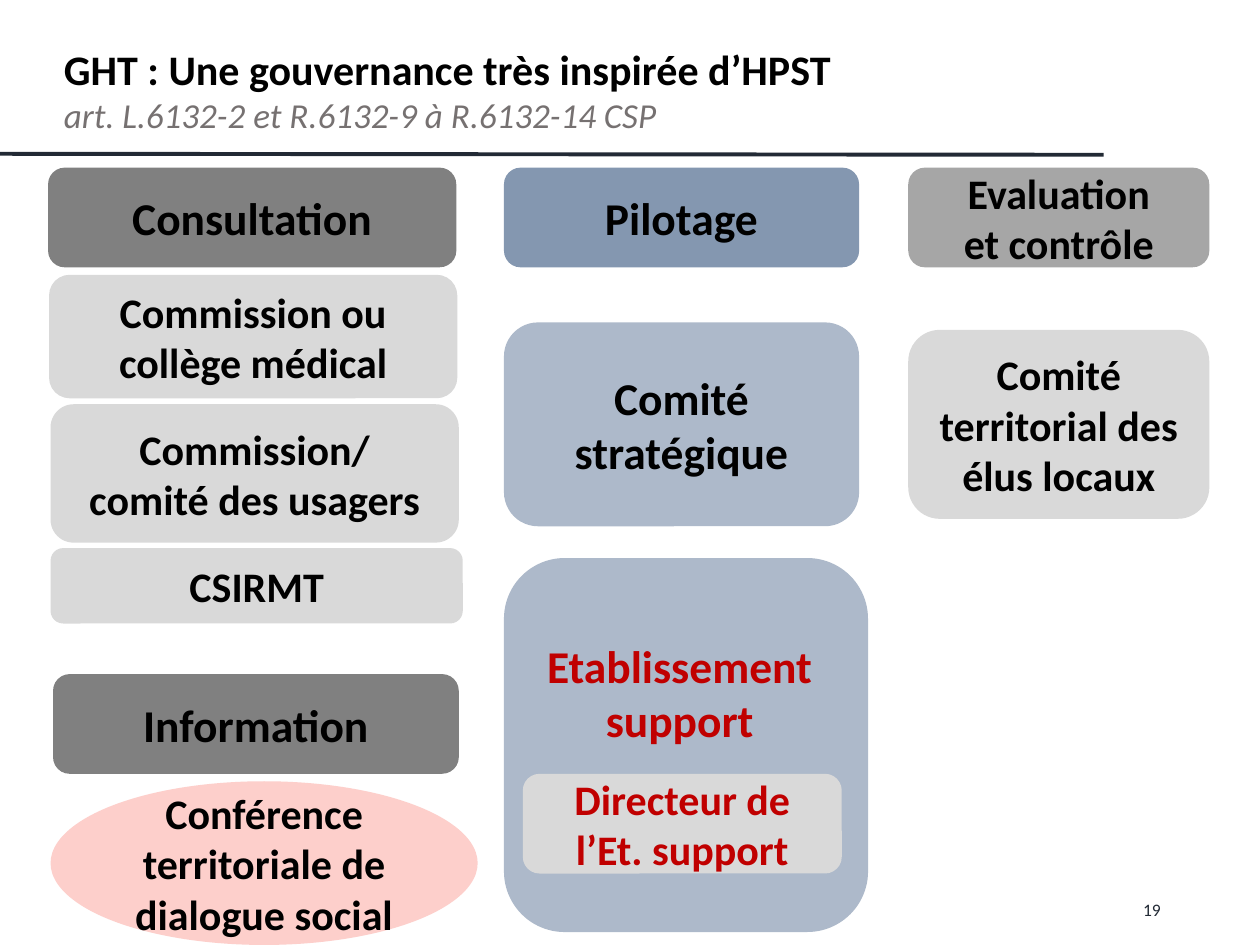
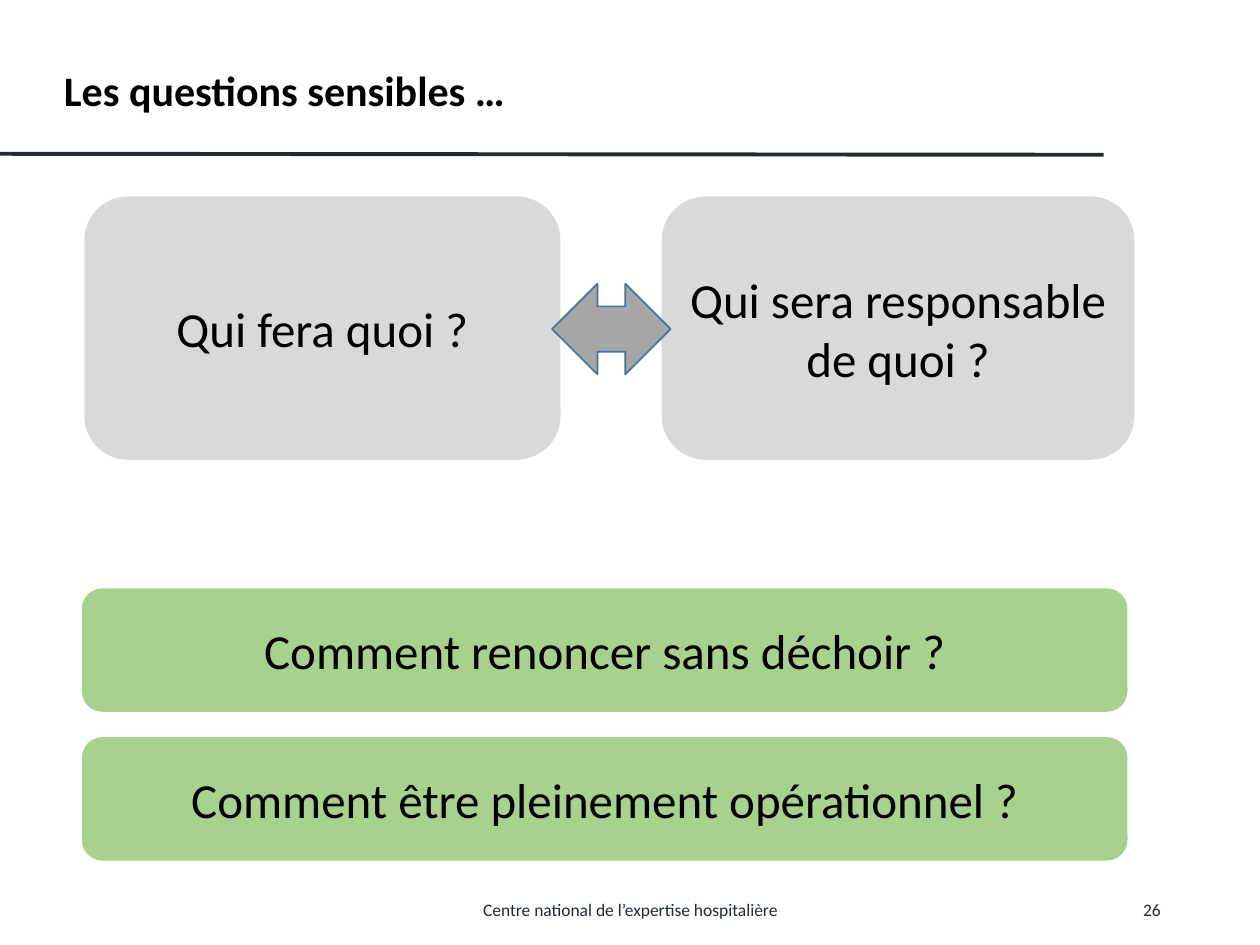
from pptx import Presentation
from pptx import util as u
from pptx.dml.color import RGBColor
from pptx.enum import shapes, text
from pptx.oxml import ns
from lxml import etree

BLACK = RGBColor(0x00, 0x00, 0x00)
RED = RGBColor(0xC0, 0x00, 0x00)
INK = RGBColor(0x22, 0x2A, 0x35)
MUTED = RGBColor(0x76, 0x71, 0x71)
DARK = RGBColor(0x80, 0x80, 0x80)
GREY = RGBColor(0xA6, 0xA6, 0xA6)
LIGHT = RGBColor(0xD9, 0xD9, 0xD9)
BLUE = RGBColor(0x84, 0x97, 0xB0)
PALE = RGBColor(0xAD, 0xB9, 0xCA)
PINK = RGBColor(0xFD, 0xCF, 0xCB)
GREEN = RGBColor(0xA9, 0xD1, 0x8E)
EDGE = RGBColor(0x43, 0x73, 0x9E)

ROUND = shapes.MSO_SHAPE.ROUNDED_RECTANGLE
OVAL = shapes.MSO_SHAPE.OVAL
ARROW = shapes.MSO_SHAPE.LEFT_RIGHT_ARROW
LEFT, MID, RIGHT = text.PP_ALIGN.LEFT, text.PP_ALIGN.CENTER, text.PP_ALIGN.RIGHT


def write(item, words, size, color=BLACK, bold=False, align=MID):
    frame = item.text_frame
    frame.word_wrap = True
    frame.vertical_anchor = text.MSO_ANCHOR.MIDDLE
    frame.text = words
    for para in frame.paragraphs:
        para.alignment = align
        for run in para.runs:
            run.font.name = "Calibri"
            run.font.size = u.Pt(size)
            run.font.bold = bold
            run.font.color.rgb = color
    return frame


def draw(slide, kind, place, fill):
    item = slide.shapes.add_shape(kind, *[u.Cm(n) for n in place])
    item.shadow.inherit = False
    item.fill.solid()
    item.fill.fore_color.rgb = fill
    item.line.fill.background()
    return item


deck = Presentation()
deck.slide_width, deck.slide_height = u.Cm(25.4), u.Cm(19.05)

# Shared title, rule and footers
pages = [
    ("GHT : Une gouvernance très inspirée d’HPST\n"
     "art. L.6132-2 et R.6132-9 à R.6132-14 CSP", "", "19"),
    ("Les questions sensibles …", "Centre national de l’expertise hospitalière", "26"),
]
slides = []
for title, foot, num in pages:
    slide = deck.slides.add_slide(deck.slide_layouts[6])
    slides.append(slide)
    rule = slide.shapes.add_connector(
        shapes.MSO_CONNECTOR.STRAIGHT, 0, u.Cm(3.1), u.Cm(22.25), u.Cm(3.12))
    rule.line.color.rgb = INK
    rule.line.width = u.Pt(2.25)
    etree.SubElement(rule._element.spPr, ns.qn("a:effectLst"))

    box = slide.shapes.add_textbox(u.Cm(1.04), u.Cm(0.69), u.Cm(21.41), u.Cm(2.24))
    head = write(box, title, 24, bold=True, align=LEFT)
    for para in head.paragraphs[1:]:
        font = para.runs[0].font
        font.size, font.bold, font.italic = u.Pt(20), False, True
        font.color.rgb = MUTED

    for words, left, width, align in [(foot, 8.41, 8.59, MID), (num, 17.93, 5.72, RIGHT)]:
        if words:
            box = slide.shapes.add_textbox(u.Cm(left), u.Cm(17.83), u.Cm(width), u.Cm(1.02))
            write(box, words, 10, INK, align=align)

first, second = slides

# Governance: support establishment, text raised above the director's box
base = draw(first, ROUND, (10.16, 11.25, 7.34, 7.54), PALE)
frame = write(base, "Etablissement\nsupport", 26, RED, True)
frame.margin_bottom = u.Cm(2.25)
frame.margin_right = u.Cm(0.5)

# Governance: column heads, bodies and committees
bodies = [
    (ROUND, (0.97, 3.38, 8.23, 2.01), DARK, "Consultation", 26, BLACK),
    (ROUND, (10.16, 3.38, 7.16, 2.01), BLUE, "Pilotage", 26, BLACK),
    (ROUND, (18.31, 3.38, 6.07, 2.01), GREY, "Evaluation\net contrôle", 24, BLACK),
    (ROUND, (0.99, 5.54, 8.23, 2.49), LIGHT, "Commission ou collège médical", 24, BLACK),
    (ROUND, (1.02, 8.15, 8.23, 2.79), LIGHT, "Commission/\ncomité des usagers", 24, BLACK),
    (ROUND, (1.02, 11.05, 8.31, 1.52), LIGHT, "CSIRMT", 24, BLACK),
    (ROUND, (1.07, 13.59, 8.18, 2.01), DARK, "Information", 26, BLACK),
    (OVAL, (1.02, 15.75, 8.61, 3.3), PINK,
     "Conférence territoriale de dialogue social", 24, BLACK),
    (ROUND, (10.16, 6.5, 7.16, 4.11), PALE, "Comité stratégique", 26, BLACK),
    (ROUND, (18.31, 6.65, 6.07, 3.81), LIGHT, "Comité territorial des élus locaux", 24, BLACK),
    (ROUND, (10.54, 15.6, 6.43, 2.01), LIGHT, "Directeur de l’Et. support", 24, RED),
]
for kind, place, fill, words, size, color in bodies:
    write(draw(first, kind, place, fill), words, size, color, True)

# Sensitive questions
asks = [
    ((1.7, 3.96, 9.6, 5.31), LIGHT, "Qui fera quoi ?"),
    ((13.34, 3.96, 9.53, 5.31), LIGHT, "Qui sera responsable de quoi ?"),
    ((1.65, 11.86, 21.08, 2.49), GREEN, "Comment renoncer sans déchoir ?"),
    ((1.65, 14.86, 21.08, 2.49), GREEN, "Comment être pleinement opérationnel ?"),
]
for place, fill, words in asks:
    frame = write(draw(second, ROUND, place, fill), words, 28)
    frame.margin_left = frame.margin_right = u.Cm(0.18)
    frame.margin_top = frame.margin_bottom = u.Cm(0.1)

# Arrow between the two upper questions
link = draw(second, ARROW, (11.13, 5.72, 2.39, 1.83), GREY)
link.line.color.rgb = EDGE
link.line.width = u.Pt(1)

deck.save("out.pptx")
